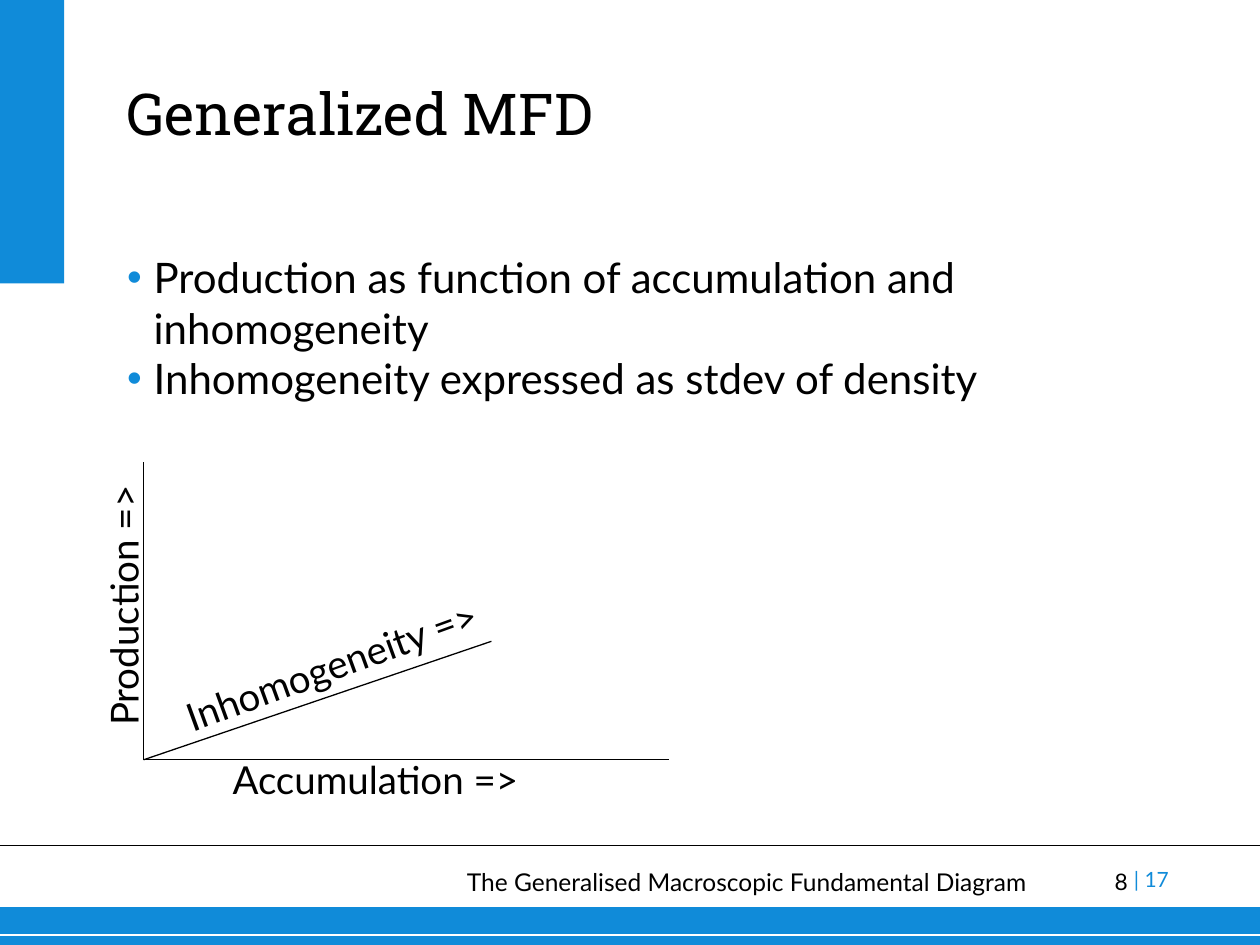
from dataclasses import dataclass

from lxml.etree import SubElement
from pptx import Presentation
from pptx.dml.color import RGBColor
from pptx.enum.shapes import MSO_CONNECTOR, MSO_SHAPE
from pptx.enum.text import MSO_ANCHOR as Anchor, MSO_AUTO_SIZE, PP_ALIGN as Align
from pptx.oxml.ns import qn
from pptx.util import Inches, Pt

CELL = 0.1
COLS, ROWS = 100, 75
BLUE, BLACK, WHITE = "108BD9", "000000", "FFFFFF"
BODY_FONT, TITLE_FONT = "Lato", "Roboto Slab"
ORIGIN = (11.4, 60.3)


@dataclass(frozen=True)
class Box:
    col: float
    row: float
    cols: float
    rows: float


@dataclass(frozen=True)
class Label:
    text: str
    box: Box
    size: float
    color: str = BLACK
    align: Align = Align.RIGHT
    rotation: float = 0
    inset: bool = True


@dataclass(frozen=True)
class Rule:
    start: tuple[float, float]
    end: tuple[float, float]
    color: str = BLACK
    width: float = 0.75


BANDS = [Box(0, 72, COLS, 3), Box(0, 0, 5.1, 22.5)]
RULES = [
    Rule((0, 74.2), (COLS, 74.2), WHITE),
    Rule((0, 67.1), (COLS, 67.1), width=1),
    Rule(ORIGIN, (53.1, ORIGIN[1])),
    Rule(ORIGIN, (ORIGIN[0], 36.7)),
    Rule(ORIGIN, (39, 50.9)),
]
LABELS = [
    Label("8", Box(83.6, 68.9, 5.9, 2.8), 13, inset=False),
    Label("| 17", Box(90, 68.8, 10, 2), 12, BLUE, Align.LEFT, inset=False),
    Label("The Generalised Macroscopic Fundamental Diagram", Box(34.2, 68.3, 48.3, 3.4), 14),
    Label("Accumulation =>", Box(10.6, 59.5, 31.5, 4.7), 22),
    Label("Inhomogeneity =>", Box(8.1, 51.4, 31.5, 4.7), 22, rotation=340),
    Label("Production =>", Box(-1.2, 46.2, 22, 4.7), 22, rotation=270),
]
TITLE_BOX = Box(10, 0, 83.8, 11.7)
BULLET_BOX = Box(10.1, 20, 83.6, 38.3)
BULLETS = [
    "Production as function of accumulation and inhomogeneity",
    "Inhomogeneity expressed as stdev of density",
]


def rgb(color: str) -> RGBColor:
    """Turn a hex string into a colour."""
    return RGBColor.from_string(color)


def grid(cells: float) -> int:
    """Convert grid cells to a length."""
    return Inches(cells * CELL)


def frame(box: Box) -> tuple[int, ...]:
    """Give left, top, width and height of a box."""
    return tuple(grid(v) for v in (box.col, box.row, box.cols, box.rows))


def clear_insets(tf) -> None:
    """Remove the inner margins of a text frame."""
    tf.margin_left = tf.margin_right = tf.margin_top = tf.margin_bottom = 0


def add_run(p, text: str, size: float, color: str = BLACK, font: str = BODY_FONT) -> None:
    """Append one formatted run to a paragraph."""
    r = p.add_run()
    r.text = text
    r.font.size, r.font.name = Pt(size), font
    r.font.color.rgb = rgb(color)


def add_band(s, box: Box) -> None:
    """Draw a plain blue rectangle."""
    sp = s.shapes.add_shape(MSO_SHAPE.RECTANGLE, *frame(box))
    sp.shadow.inherit = False
    sp.fill.solid()
    sp.fill.fore_color.rgb = rgb(BLUE)
    sp.line.fill.background()


def add_rule(s, rule: Rule) -> None:
    """Draw a straight line without a shadow."""
    ends = [grid(v) for v in (*rule.start, *rule.end)]
    cx = s.shapes.add_connector(MSO_CONNECTOR.STRAIGHT, *ends)
    cx.line.color.rgb = rgb(rule.color)
    cx.line.width = Pt(rule.width)
    SubElement(cx._element.spPr, qn("a:effectLst"))


def add_label(s, label: Label) -> None:
    """Draw a one-line text label."""
    sp = s.shapes.add_textbox(*frame(label.box))
    sp.rotation = label.rotation
    tf = sp.text_frame
    tf.word_wrap = True
    if not label.inset:
        clear_insets(tf)
    p = tf.paragraphs[0]
    p.alignment = label.align
    add_run(p, label.text, label.size, label.color)


def add_bullet(p, text: str) -> None:
    """Fill a paragraph as a bulleted item."""
    pPr = p._p.get_or_add_pPr()
    indent = Inches(0.21)
    pPr.set("marL", str(indent))
    pPr.set("indent", str(-indent))
    SubElement(SubElement(pPr, qn("a:buClr")), qn("a:srgbClr"), val=BLUE)
    SubElement(pPr, qn("a:buFont"), typeface="Arial")
    SubElement(pPr, qn("a:buChar"), char="•")
    add_run(p, text, 24)


def add_bullets(s, box: Box, items: list[str]) -> None:
    """Draw the bulleted list."""
    tf = s.shapes.add_textbox(*frame(box)).text_frame
    tf.word_wrap = True
    clear_insets(tf)
    for i, item in enumerate(items):
        add_bullet(tf.add_paragraph() if i else tf.paragraphs[0], item)


def set_title(s, box: Box, text: str) -> None:
    """Place and format the title placeholder."""
    sp = s.shapes.title
    sp.left, sp.top, sp.width, sp.height = frame(box)
    tf = sp.text_frame
    tf.auto_size = MSO_AUTO_SIZE.NONE
    tf.vertical_anchor = Anchor.BOTTOM
    clear_insets(tf)
    p = tf.paragraphs[0]
    p.alignment = Align.LEFT
    add_run(p, text, 33, font=TITLE_FONT)


def main() -> None:
    """Build and save the slide."""
    prs = Presentation()
    prs.slide_width, prs.slide_height = grid(COLS), grid(ROWS)
    s = prs.slides.add_slide(prs.slide_layouts[5])
    set_title(s, TITLE_BOX, "Generalized MFD")
    for band in BANDS:
        add_band(s, band)
    for rule in RULES:
        add_rule(s, rule)
    for label in LABELS:
        add_label(s, label)
    add_bullets(s, BULLET_BOX, BULLETS)
    prs.save("out.pptx")


if __name__ == "__main__":
    main()
